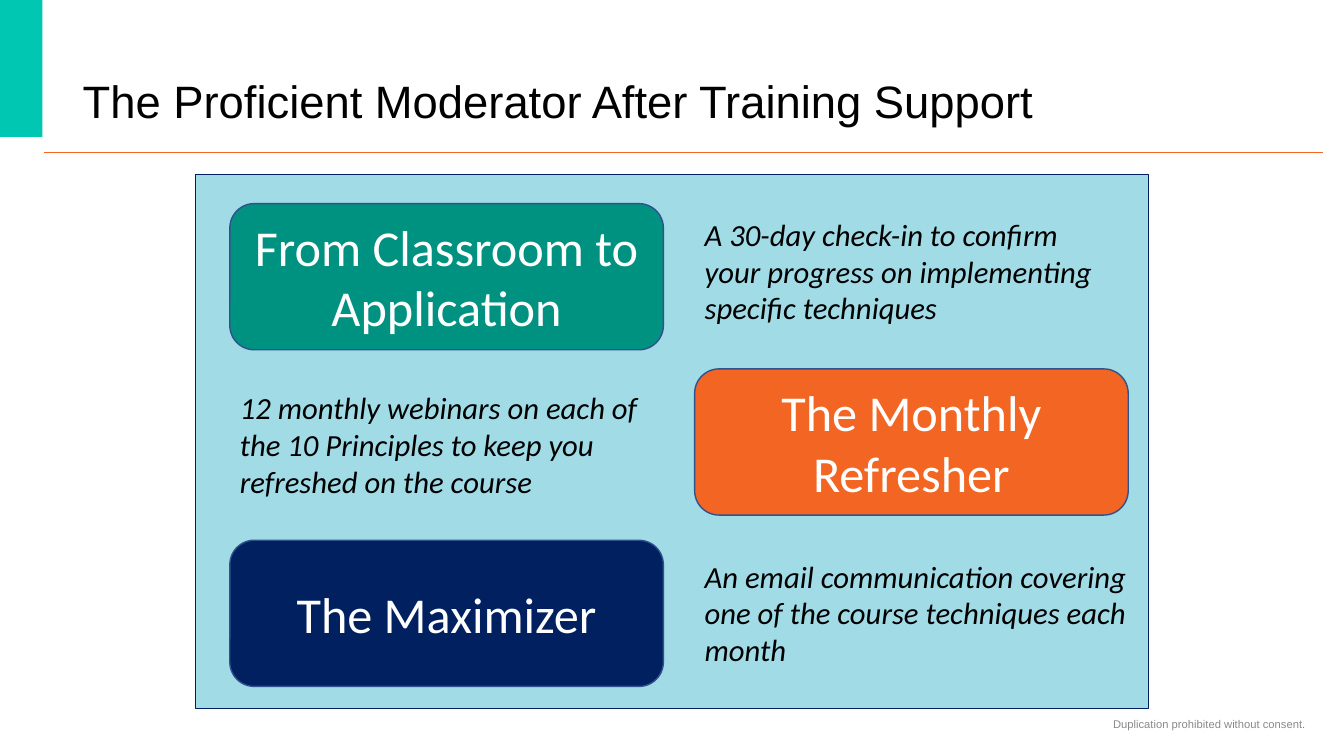
from dataclasses import dataclass

from lxml import etree
from pptx import Presentation
from pptx.dml.color import RGBColor
from pptx.enum.shapes import MSO_CONNECTOR, MSO_SHAPE
from pptx.enum.text import MSO_ANCHOR, MSO_AUTO_SIZE, PP_ALIGN
from pptx.oxml.ns import qn
from pptx.util import Inches, Pt

RECT, ROUND = MSO_SHAPE.RECTANGLE, MSO_SHAPE.ROUNDED_RECTANGLE
LINE = MSO_CONNECTOR.STRAIGHT
TOP, MID, LOW = MSO_ANCHOR.TOP, MSO_ANCHOR.MIDDLE, MSO_ANCHOR.BOTTOM
LEFT, MIDST, RIGHT = PP_ALIGN.LEFT, PP_ALIGN.CENTER, PP_ALIGN.RIGHT
FIXED = MSO_AUTO_SIZE.NONE
WIDE, HIGH = 13.33, 7.5


@dataclass(frozen=True)
class Theme:
    teal: str = "00C7B1"
    green: str = "009281"
    orange: str = "F26522"
    navy: str = "002060"
    sky: str = "A0DBE6"
    edge: str = "2F528F"
    head: tuple = ("Arial", 32.4, "000000", False)
    card: tuple = ("Calibri", 35.9, "FFFFFF", False)
    note: tuple = ("Calibri", 21.9, "000000", True)
    foot: tuple = ("Arial", 8, "898989", False)


THEME = Theme()

# Each row: card column, card top, fill, heading, note top, note width, note
ROWS = [
    (0, 0.29, THEME.green, "From Classroom to Application", 0.36, 4.16,
     "A 30-day check-in to confirm your progress on implementing "
     "specific techniques"),
    (1, 1.93, THEME.orange, "The Monthly Refresher", 2.08, 4.16,
     "12 monthly webinars on each of the 10 Principles to keep you "
     "refreshed on the course"),
    (0, 3.63, THEME.navy, "The Maximizer", 3.75, 4.4,
     "An email communication covering one of the course techniques "
     "each month"),
]


def write(shape, text, style, align=LEFT, anchor=TOP):
    frame = shape.text_frame
    frame.text = text
    look = {"word_wrap": True, "auto_size": FIXED, "vertical_anchor": anchor,
            "margin_left": Inches(0.1), "margin_right": Inches(0.1),
            "margin_top": Inches(0.05), "margin_bottom": Inches(0.05)}
    for key, value in look.items():
        setattr(frame, key, value)
    para = frame.paragraphs[0]
    para.alignment = align
    name, size, color, slant = style
    font = para.runs[0].font
    for key, value in {"name": name, "size": Pt(size), "bold": False,
                       "italic": slant}.items():
        setattr(font, key, value)
    font.color.rgb = RGBColor.from_string(color)
    return para


def block(slide, kind, box, fill, edge=None):
    shape = slide.shapes.add_shape(kind, *map(Inches, box))
    shape.shadow.inherit = False
    shape.fill.solid()
    shape.fill.fore_color.rgb = RGBColor.from_string(fill)
    if edge:
        shape.line.color.rgb = RGBColor.from_string(edge)
        shape.line.width = Pt(1)
    else:
        shape.line.fill.background()
    return shape


def label(slide, box, text, style, **place):
    write(slide.shapes.add_textbox(*map(Inches, box)), text, style, **place)


def header(slide, box):
    x, y, w, h = box
    tab = 0.42
    block(slide, RECT, (x, y, tab, h * 0.9), THEME.teal)
    ends = (x + tab + 0.02, y + h, x + w, y + h)
    rule = slide.shapes.add_connector(LINE, *map(Inches, ends))
    rule.line.color.rgb = RGBColor.from_string(THEME.orange)
    rule.line.width = Pt(0.5)
    etree.SubElement(rule._element.spPr, qn("a:effectLst"))
    title = slide.shapes.title
    place = (x + tab + 0.3, y + 0.56, 9.81, 0.76)
    for key, value in zip(("left", "top", "width", "height"), place):
        setattr(title, key, Inches(value))
    para = write(title, "The Proficient Moderator After Training Support",
                 THEME.head, anchor=LOW)
    para.line_spacing = 0.9


def panel(slide, box):
    """Draw cards and their notes, which swap columns from row to row."""
    x, y, w, h = box
    block(slide, RECT, box, THEME.sky, THEME.navy)
    inset, step = 0.34, 4.61
    for col, top, fill, head, drop, span, note in ROWS:
        left = x + inset
        card = block(slide, ROUND, (left + col * step, y + top, 4.3, 1.45),
                     fill, THEME.edge)
        write(card, head, THEME.card, MIDST, MID)
        label(slide, (left + (1 - col) * step, y + drop, span, 1.21),
              note, THEME.note)


def footer(slide, box):
    label(slide, box, "Duplication prohibited without consent.", THEME.foot,
          align=RIGHT, anchor=MID)


def main():
    deck = Presentation()
    deck.slide_width, deck.slide_height = Inches(WIDE), Inches(HIGH)
    slide = deck.slides.add_slide(deck.slide_layouts[5])
    header(slide, (0, 0, 13.12, 1.51))
    panel(slide, (1.94, 1.73, 9.45, 5.3))
    footer(slide, (7.42, 6.98, 5.63, 0.4))
    deck.save("out.pptx")


if __name__ == "__main__":
    main()
